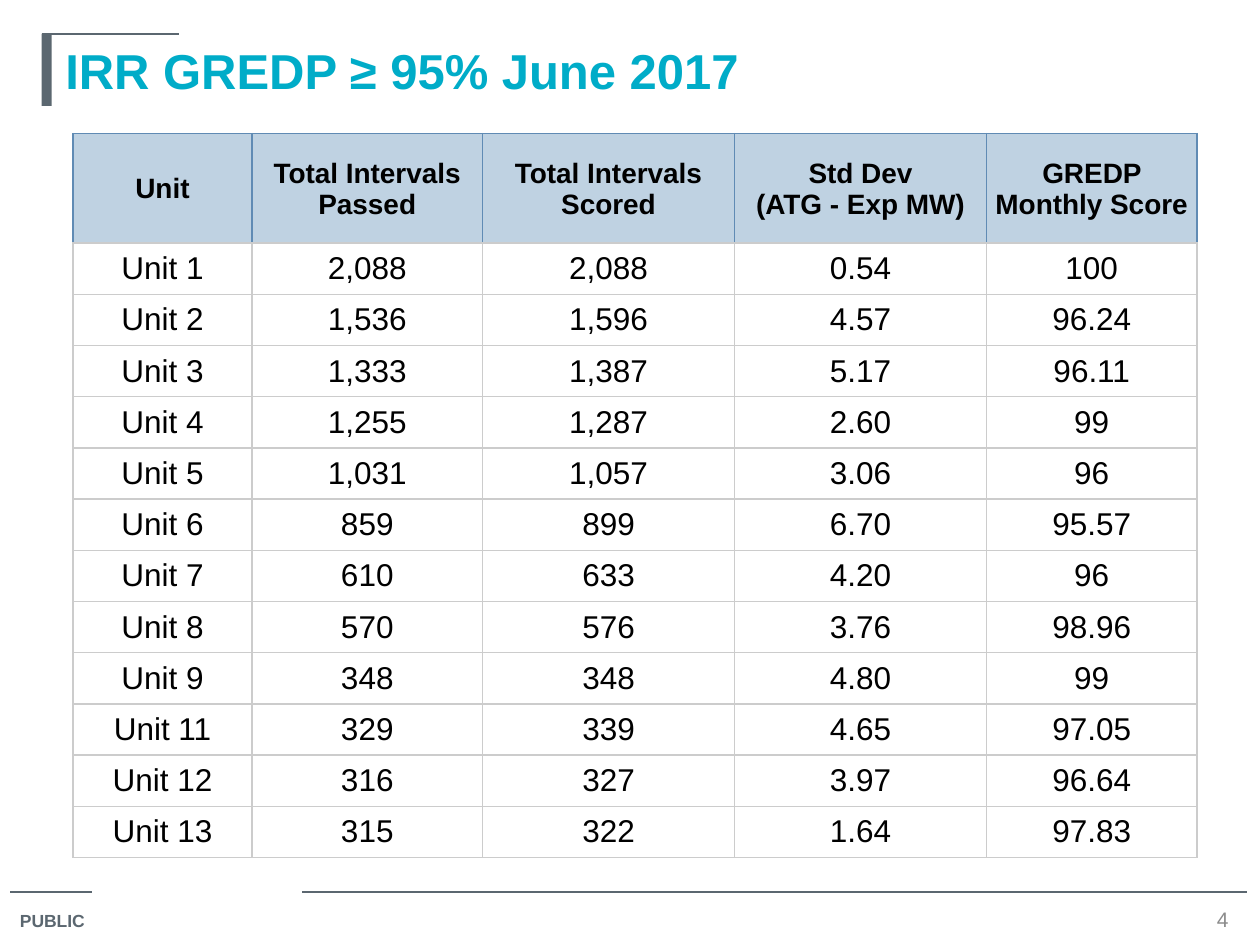
"""Build the IRR GREDP monthly score slide."""
from lxml.etree import SubElement
from pptx import Presentation
from pptx.dml.color import RGBColor
from pptx.enum.shapes import MSO_CONNECTOR, MSO_SHAPE
from pptx.enum.text import MSO_ANCHOR as ANCHOR, PP_ALIGN as ALIGN
from pptx.oxml import parse_xml
from pptx.oxml.ns import nsdecls, qn
from pptx.util import Inches, Pt

rgb = RGBColor.from_string
BLACK, SLATE, TEAL, GRAY = "000000", "5B6770", "00ACC8", "8C8C8C"
HEADER_FILL, HEADER_EDGE, GRID = "BFD2E2", "608BB4", "CCCCCC"


def style(paragraph, size, color, bold=False, align=ALIGN.LEFT):
    paragraph.alignment = align
    font = paragraph.font
    font.name, font.size, font.bold = "Arial", Pt(size), bold
    font.color.rgb = rgb(color)


def set_borders(cell, edge, bottom):
    properties = cell._tc.get_or_add_tcPr()
    for side, color in zip("LRTB", (edge, edge, edge, bottom)):
        properties.append(parse_xml(
            f'<a:ln{side} {nsdecls("a")} w="{Pt(1)}"><a:solidFill>'
            f'<a:srgbClr val="{color}"/></a:solidFill></a:ln{side}>'))


prs = Presentation()
prs.slide_width, prs.slide_height = Inches(10), Inches(7.5)
slide = prs.slides.add_slide(prs.slide_layouts[6])
shapes = slide.shapes

for start, end, y in [(0.08, 0.73, 7.08), (2.4, 9.9, 7.08), (0.33, 1.42, 0.27)]:
    rule = shapes.add_connector(
        MSO_CONNECTOR.STRAIGHT, Inches(start), Inches(y), Inches(end), Inches(y))
    rule.line.color.rgb = rgb(SLATE)
    rule.line.width = Pt(0.75)
    SubElement(rule._element.spPr, qn("a:effectLst"))

title_bar = shapes.add_shape(
    MSO_SHAPE.RECTANGLE, Inches(0.33), Inches(0.27), Inches(0.08), Inches(0.57))
title_bar.shadow.inherit = False
title_bar.fill.solid()
title_bar.fill.fore_color.rgb = rgb(SLATE)
title_bar.line.fill.background()

title = shapes.add_textbox(Inches(0.42), Inches(0.27), Inches(9.25), Inches(0.78)).text_frame
title.word_wrap = True
title.text = "IRR GREDP ≥ 95% June 2017"
style(title.paragraphs[0], 28, TEAL, bold=True)

classification = shapes.add_textbox(
    Inches(0.06), Inches(7.17), Inches(0.77), Inches(0.28)).text_frame
classification.text = "PUBLIC"
style(classification.paragraphs[0], 10, SLATE, bold=True)

page_number = shapes.add_textbox(
    Inches(9.58), Inches(7.18), Inches(0.25), Inches(0.23)).text_frame
page_number.margin_left = page_number.margin_right = 0
page_number.margin_top = page_number.margin_bottom = 0
page_number.word_wrap = True
page_number.vertical_anchor = ANCHOR.MIDDLE
page_number.text = "4"
style(page_number.paragraphs[0], 12, GRAY, align=ALIGN.CENTER)

scores = [
    ("Unit", "Total Intervals Passed", "Total Intervals Scored",
     "Std Dev\n(ATG - Exp MW)", "GREDP Monthly Score"),
    ("Unit 1", "2,088", "2,088", "0.54", "100"),
    ("Unit 2", "1,536", "1,596", "4.57", "96.24"),
    ("Unit 3", "1,333", "1,387", "5.17", "96.11"),
    ("Unit 4", "1,255", "1,287", "2.60", "99"),
    ("Unit 5", "1,031", "1,057", "3.06", "96"),
    ("Unit 6", "859", "899", "6.70", "95.57"),
    ("Unit 7", "610", "633", "4.20", "96"),
    ("Unit 8", "570", "576", "3.76", "98.96"),
    ("Unit 9", "348", "348", "4.80", "99"),
    ("Unit 11", "329", "339", "4.65", "97.05"),
    ("Unit 12", "316", "327", "3.97", "96.64"),
    ("Unit 13", "315", "322", "1.64", "97.83"),
]
column_widths = [1.42, 1.83, 2, 2, 1.67]
table_height, header_height = 5.75, 0.87
unit_height = (table_height - header_height) / (len(scores) - 1)

score_table = shapes.add_table(
    len(scores), len(column_widths), Inches(0.58), Inches(1.06),
    Inches(sum(column_widths)), Inches(table_height)).table
score_table.horz_banding = False
for column, width in zip(score_table.columns, column_widths):
    column.width = Inches(width)

for index, (row, values) in enumerate(zip(score_table.rows, scores)):
    is_header = index == 0
    row.height = Inches(header_height if is_header else unit_height)
    for cell, value in zip(row.cells, values):
        cell.text = value
        cell.vertical_anchor = ANCHOR.MIDDLE
        inset = Inches(0.01 if is_header else 0)
        cell.margin_left = cell.margin_right = cell.margin_top = inset
        cell.margin_bottom = 0
        set_borders(cell, HEADER_EDGE if is_header else GRID, GRID)
        if is_header:
            cell.fill.solid()
            cell.fill.fore_color.rgb = rgb(HEADER_FILL)
        else:
            cell.fill.background()
        for paragraph in cell.text_frame.paragraphs:
            style(paragraph, 16 if is_header else 18, BLACK, is_header, ALIGN.CENTER)

prs.save("out.pptx")
